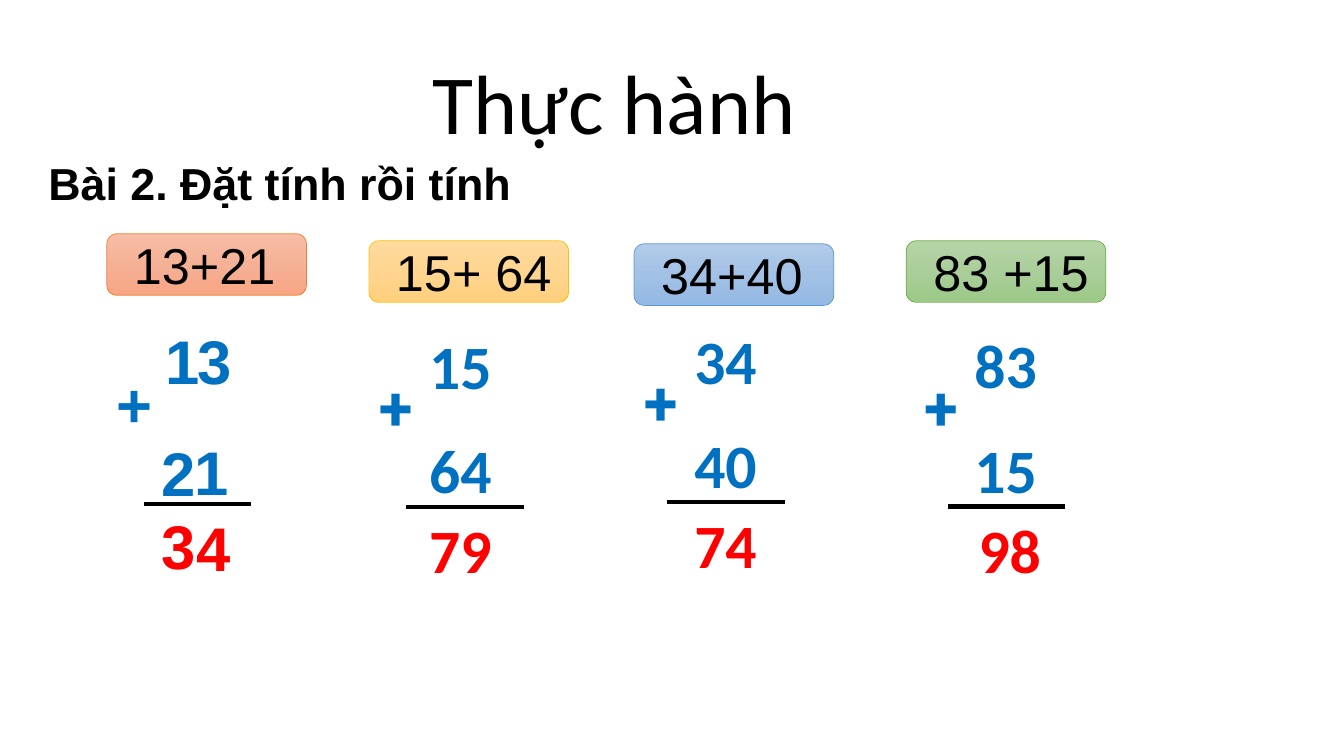
from copy import deepcopy

from lxml.etree import SubElement
from pptx import Presentation
from pptx.dml.color import RGBColor
from pptx.enum.shapes import MSO_CONNECTOR, MSO_SHAPE
from pptx.enum.text import MSO_ANCHOR, MSO_AUTO_SIZE, PP_ALIGN
from pptx.oxml.ns import qn
from pptx.util import Pt

HUES = {
    "ink": "000000",
    "blue": "0070C0",
    "red": "FF0000",
    "coral": ("F7BDA5", "F5B196", "F8A582", "ED7D31"),
    "gold": ("FFDB9E", "FFD590", "FFD07C", "FFC000"),
    "sky": ("B1CBE9", "A3C1E5", "93B9E4", "5B9BD5"),
    "leaf": ("B5D5A7", "AACE9A", "9CC987", "70AD47"),
}


def tint(code):
    """Turn a hex string into a colour."""
    return RGBColor.from_string(code)


def write(line, text, size, face, hue, bold):
    """Add one left-aligned run to a paragraph."""
    line.alignment = PP_ALIGN.LEFT
    run = line.add_run()
    run.text = text
    run.font.size = Pt(size)
    run.font.name = face
    run.font.bold = bold
    run.font.color.rgb = tint(HUES[hue])


def label(slide, box, rows, hue, face, size=44):
    """Place bold lines of text in a box."""
    frame = slide.shapes.add_textbox(*map(Pt, box)).text_frame
    frame.word_wrap = True
    frame.auto_size = MSO_AUTO_SIZE.SHAPE_TO_FIT_TEXT
    for i, text in enumerate(rows):
        line = frame.add_paragraph() if i else frame.paragraphs[0]
        if i:
            line.space_before = Pt(size / 2)
        write(line, text, size, face, hue, True)


def rule(slide, x, y, wide):
    """Draw the bar above a total."""
    bar = slide.shapes.add_connector(
        MSO_CONNECTOR.STRAIGHT, Pt(x), Pt(y), Pt(x + wide), Pt(y))
    bar.line.color.rgb = tint(HUES["ink"])
    bar.line.width = Pt(3)
    SubElement(bar._element.spPr, qn("a:effectLst"))


def header(slide, x, y, wide, high):
    """Set the title in its box."""
    title = slide.shapes.title
    title.left, title.top, title.width, title.height = map(Pt, (x, y, wide, high))
    frame = title.text_frame
    frame.auto_size = MSO_AUTO_SIZE.NONE
    frame.vertical_anchor = MSO_ANCHOR.TOP
    write(frame.paragraphs[0], "Thực hành", 60, "Calibri", "ink", False)


def card(slide, x, y, text, hue):
    """Draw a shaded card with its sum."""
    box = slide.shapes.add_shape(
        MSO_SHAPE.ROUNDED_RECTANGLE, Pt(x), Pt(y), Pt(142.6), Pt(44))
    box.shadow.inherit = False
    *shades, edge = HUES[hue]
    box.fill.gradient()
    box.fill.gradient_angle = 270
    stops = box._element.xpath(".//a:gsLst")[0]
    stops.insert(1, deepcopy(stops[0]))
    for i, (stop, shade) in enumerate(zip(box.fill.gradient_stops, shades)):
        stop.position = i / 2
        stop.color.rgb = tint(shade)
    box.line.color.rgb = tint(edge)
    box.line.width = Pt(0.5)
    frame = box.text_frame
    frame.vertical_anchor = MSO_ANCHOR.MIDDLE
    frame.margin_left, frame.margin_right = Pt(17.2), Pt(0)
    write(frame.paragraphs[0], text, 36, "Arial", "ink", False)


def column(slide, x, y, parts, total, bar=26.6, end=36):
    """Set out a sum in a column."""
    label(slide, (x + 36, y, 102, 140), parts, "blue", "Calibri")
    label(slide, (x, y + 29.8, 42, 60), ["+"], "blue", "Roboto")
    rule(slide, x + bar, y + 131.8, 84.2)
    label(slide, (x + end, y + 131.8, 66, 60), [total], "red", "Calibri")


def digits(slide, x, y):
    """Set out the first sum digit by digit."""
    for text, dx, dy, wide, hue in (
            ("1", 34.6, 0, 46.8, "blue"), ("3", 57.6, 0, 50.4, "blue"),
            ("2", 31.7, 80.6, 23.8, "blue"), ("1", 55.4, 79.9, 41, "blue"),
            ("+", 0, 31, 40.3, "blue"),
            ("3", 31.7, 132.5, 23.8, "red"), ("4", 56.9, 133.9, 39.6, "red")):
        label(slide, (x + dx, y + dy, wide, 60), [text], hue, "Arial")
    rule(slide, x + 26.6, y + 133.2, 76.3)


def main():
    """Build and save the slide."""
    deck = Presentation()
    deck.slide_width, deck.slide_height = Pt(960), Pt(540)
    slide = deck.slides.add_slide(deck.slide_layouts[5])
    header(slide, 301.9, 32.4, 455, 80)
    label(slide, (27.4, 108, 563, 46), ["Bài 2. Đặt tính rồi tính"],
          "ink", "Arial", 32)
    for x, y, text, hue in (
            (76.3, 167, "13+21", "coral"), (263.5, 172, "15+ 64", "gold"),
            (452.9, 174.2, "34+40", "sky"), (647.3, 172, "83 +15", "leaf")):
        card(slide, x, y, text, hue)
    digits(slide, 76.3, 226.8)
    column(slide, 263.5, 230.4, ("15", "64"), "79")
    column(slide, 452.9, 226.8, ("34", "40"), "74", 23.8)
    column(slide, 653, 230, ("83", "15"), "98", 23.8, 38.9)
    deck.save("out.pptx")


if __name__ == "__main__":
    main()
